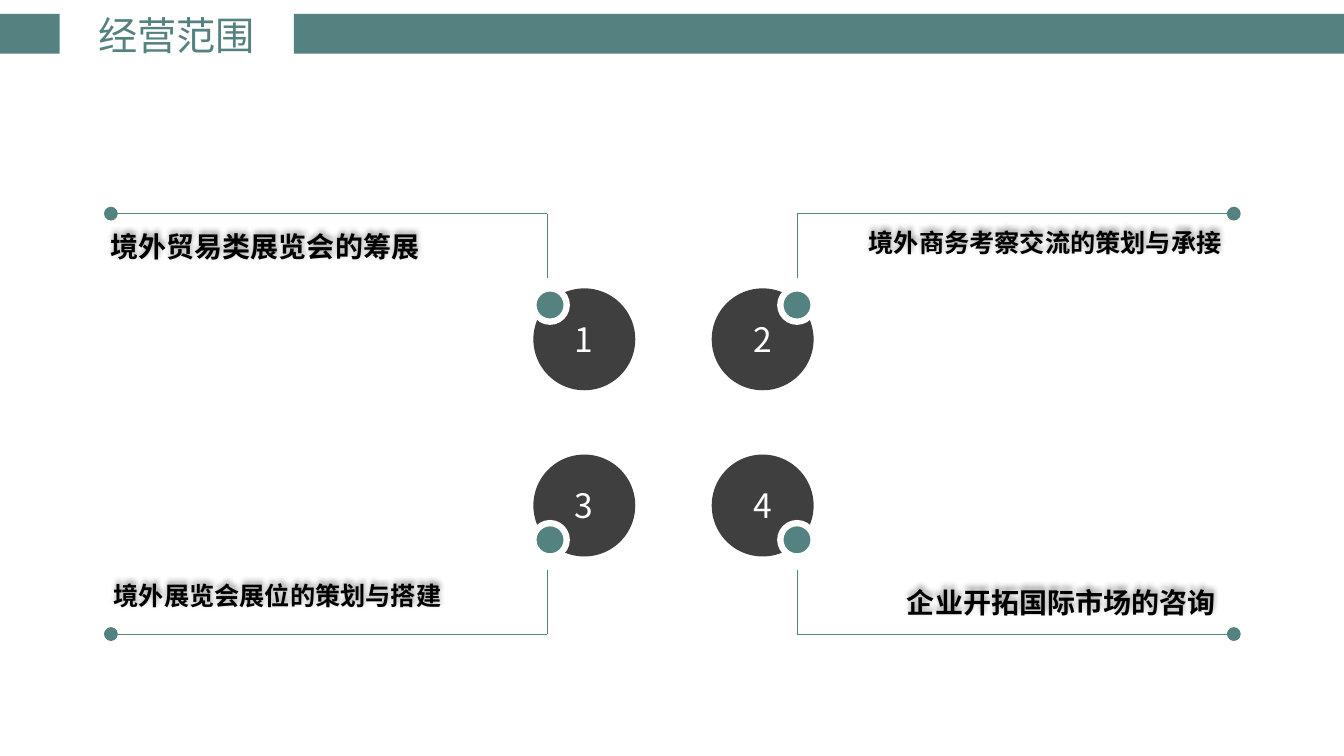
"""Builds the business scope slide with four numbered circles and labelled callouts."""
from lxml import etree
from pptx import Presentation
from pptx import util as u
from pptx.dml.color import RGBColor
from pptx.enum import shapes, text
from pptx.oxml import ns

Pt = u.Pt
FONT = "Noto Sans CJK SC"
COLORS = {"teal": "548280", "dark": "3F3F3F", "white": "FFFFFF", "black": "000000"}
DIAMETER, DOT = 72.8, 23.8
SCOPES = [
    ("1", 381, 206, "境外贸易类展览会的筹展", 20, (72, 160.6, 290.2, 31.5)),
    ("2", 508.4, 206, "境外商务考察交流的策划与承接", 18, (613.4, 159.1, 284.4, 29)),
    ("3", 381, 324.7, "境外展览会展位的策划与搭建", 18, (74.2, 411.1, 290.2, 29)),
    ("4", 508.4, 324.7, "企业开拓国际市场的咨询", 20, (640.8, 414.7, 290.2, 31.5)),
]


def rgb(name):
    return RGBColor.from_string(COLORS[name])


def sub(parent, tag, **attrs):
    return etree.SubElement(parent, ns.qn(tag), attrs)


def write(tf, content, size=18, color="black", bold=False, align=None, before=0):
    p = tf.paragraphs[0]
    p.alignment = align
    p.space_before = Pt(before)
    r = p.add_run()
    r.text = content
    r.font.size = Pt(size)
    r.font.bold = bold
    r.font.color.rgb = rgb(color)
    r.font.name = FONT
    sub(r._r.get_or_add_rPr(), "a:ea", typeface=FONT)


def add_shape(s, kind, box, fill, line=None, width=0):
    sp = s.shapes.add_shape(kind, *map(Pt, box))
    sp.shadow.inherit = False
    sp.fill.solid()
    sp.fill.fore_color.rgb = rgb(fill)
    if line:
        sp.line.color.rgb = rgb(line)
        sp.line.width = Pt(width)
    else:
        sp.line.fill.background()
    return sp


def add_title(s, content):
    sp = s.shapes.title
    sp.left, sp.top, sp.width, sp.height = map(Pt, (62.6, 4.3, 127.4, 41))
    tf = sp.text_frame
    tf.word_wrap = False
    tf.auto_size = text.MSO_AUTO_SIZE.SHAPE_TO_FIT_TEXT
    tf.vertical_anchor = text.MSO_ANCHOR.MIDDLE
    write(tf, content, size=28, color="teal", align=text.PP_ALIGN.CENTER)


def add_circle(s, number, x, y):
    sp = add_shape(s, shapes.MSO_SHAPE.OVAL, (x, y, DIAMETER, DIAMETER), "dark")
    tf = sp.text_frame
    tf.vertical_anchor = text.MSO_ANCHOR.MIDDLE
    write(tf, number, size=24, color="white", align=text.PP_ALIGN.CENTER)


def add_line(s, start, end, oval=False):
    cn = s.shapes.add_connector(shapes.MSO_CONNECTOR.STRAIGHT, *map(Pt, start + end))
    cn.line.color.rgb = rgb("teal")
    cn.line.width = Pt(0.5)
    if oval:
        sub(cn.line._get_or_add_ln(), "a:tailEnd", type="oval", w="lg", len="lg")
    sub(cn._element.spPr, "a:effectLst")


def add_callout(s, left, upper):
    x, far = (391, 79.2) if left else (569.5, 881.3)
    near, y = (198.7, 152.6) if upper else (406.8, 452.9)
    add_line(s, (x, near), (x, y))
    add_line(s, (x, y), (far, y), oval=True)


def add_label(s, content, size, box):
    sp = s.shapes.add_textbox(*map(Pt, box))
    tf = sp.text_frame
    tf.word_wrap = True
    tf.auto_size = text.MSO_AUTO_SIZE.SHAPE_TO_FIT_TEXT
    write(tf, content, size=size, bold=True, before=6)
    effects = sub(sp._element.spPr, "a:effectLst")
    shadow = sub(effects, "a:outerShdw", blurRad="50800", dist="38100",
                 dir="16200000", rotWithShape="0")
    color = sub(shadow, "a:srgbClr", val=COLORS["black"])
    sub(color, "a:alpha", val="40000")


def main():
    prs = Presentation()
    prs.slide_width, prs.slide_height = Pt(960), Pt(540)
    s = prs.slides.add_slide(prs.slide_layouts[5])
    for x, width in ((0, 42.7), (210, 750)):
        add_shape(s, shapes.MSO_SHAPE.RECTANGLE, (x, 10, width, 28.4), "teal")
    add_title(s, "经营范围")
    for i, (number, x, y, label, size, box) in enumerate(SCOPES):
        left, upper = i % 2 == 0, i < 2
        add_circle(s, number, x, y)
        dot_x = x if left else x + DIAMETER - DOT
        dot_y = y if upper else y + DIAMETER - DOT
        add_shape(s, shapes.MSO_SHAPE.OVAL, (dot_x, dot_y, DOT, DOT), "teal", "white", 4.5)
        add_callout(s, left, upper)
        add_label(s, label, size, box)
    prs.save("out.pptx")


if __name__ == "__main__":
    main()
